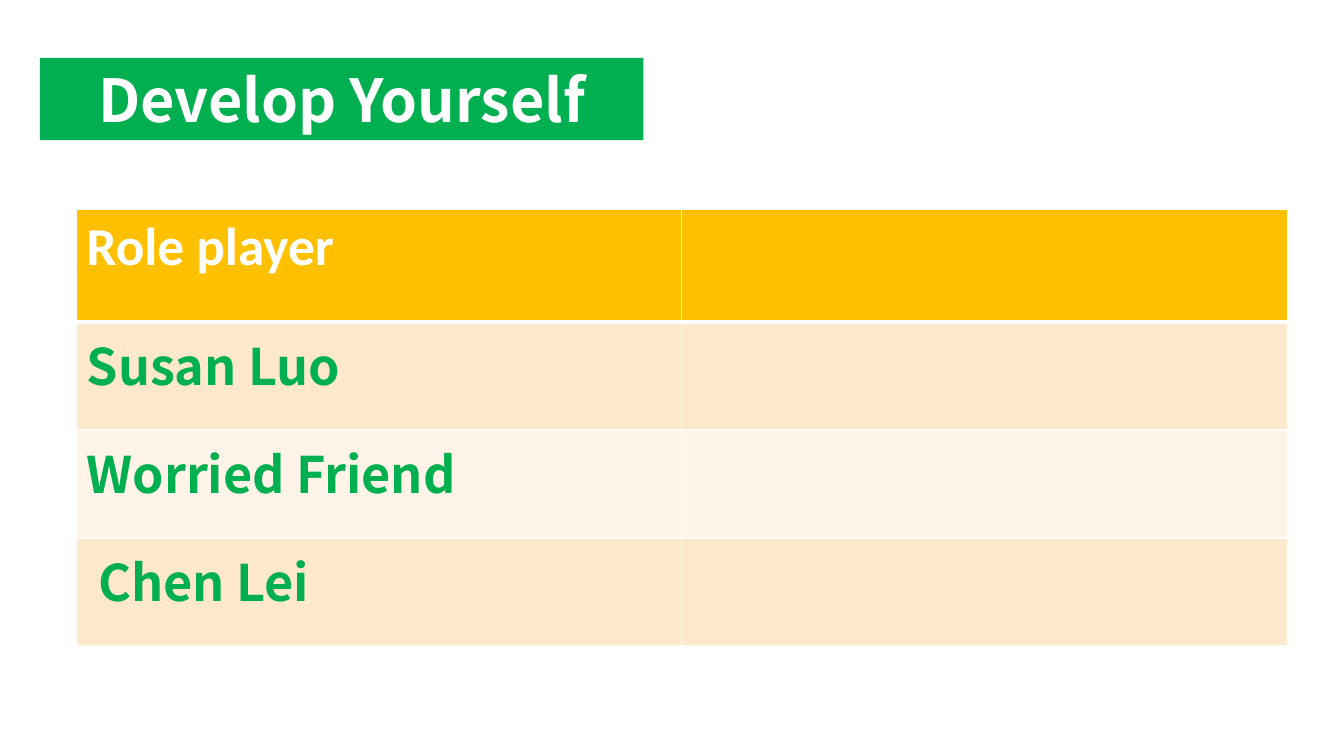
from pptx import Presentation
from pptx.dml.color import RGBColor
from pptx.enum.text import MSO_ANCHOR, MSO_AUTO_SIZE, PP_ALIGN
from pptx.oxml import parse_xml
from pptx.oxml.ns import nsdecls
from pptx.util import Cm, Pt

HEADING_FONT = "Noto Sans CJK SC"
GREEN, WHITE, AMBER = "00B050", "FFFFFF", "FFC000"
BANDS = ["FFF4E7", "FFE8CC"]


def color(value):
    return RGBColor.from_string(value)


def write(frame, text, font=HEADING_FONT, size=34, fill=GREEN, align=PP_ALIGN.LEFT):
    para = frame.paragraphs[0]
    para.alignment = align
    span = para.add_run()
    span.text = text
    span.font.name = font
    span.font.size = Pt(size)
    span.font.bold = True
    span.font.color.rgb = color(fill)


deck = Presentation()
deck.slide_width, deck.slide_height = Cm(32), Cm(18)
page = deck.slides.add_slide(deck.slide_layouts[5])

# Title banner
title = page.shapes.title
title.left, title.top, title.width, title.height = Cm(0.95), Cm(1.38), Cm(14.37), Cm(1.96)
title.fill.solid()
title.fill.fore_color.rgb = color(GREEN)
frame = title.text_frame
frame.auto_size = MSO_AUTO_SIZE.NONE
frame.vertical_anchor = MSO_ANCHOR.MIDDLE
frame.margin_top = frame.margin_bottom = 0
write(frame, "Develop Yourself", size=40, fill=WHITE, align=PP_ALIGN.CENTER)

# Role table
roles = ["Role player", "Susan Luo", "Worried Friend", " Chen Lei"]
table = page.shapes.add_table(len(roles), 2, Cm(1.81), Cm(4.98), Cm(28.83), Cm(10.39)).table
for column in table.columns:
    column.width = Cm(14.42)

for number, role in enumerate(roles):
    header = number == 0
    table.rows[number].height = Cm(2.69 if header else 2.57)
    for cell in table.rows[number].cells:
        # Borders come before the fill in the cell properties
        properties = cell._tc.get_or_add_tcPr()
        for side in ["L", "R", "T", "B"]:
            thick = (header and side == "B") or (number == 1 and side == "T")
            properties.append(parse_xml(
                f'<a:ln{side} {nsdecls("a")} w="{Pt(3 if thick else 1)}"><a:solidFill>'
                f'<a:srgbClr val="{WHITE}"/></a:solidFill></a:ln{side}>'))
        cell.fill.solid()
        cell.fill.fore_color.rgb = color(AMBER if header else BANDS[number % 2])
    if header:
        write(table.cell(number, 0).text_frame, role, font="Calibri", size=36, fill=WHITE)
    else:
        write(table.cell(number, 0).text_frame, role)

deck.save("out.pptx")
